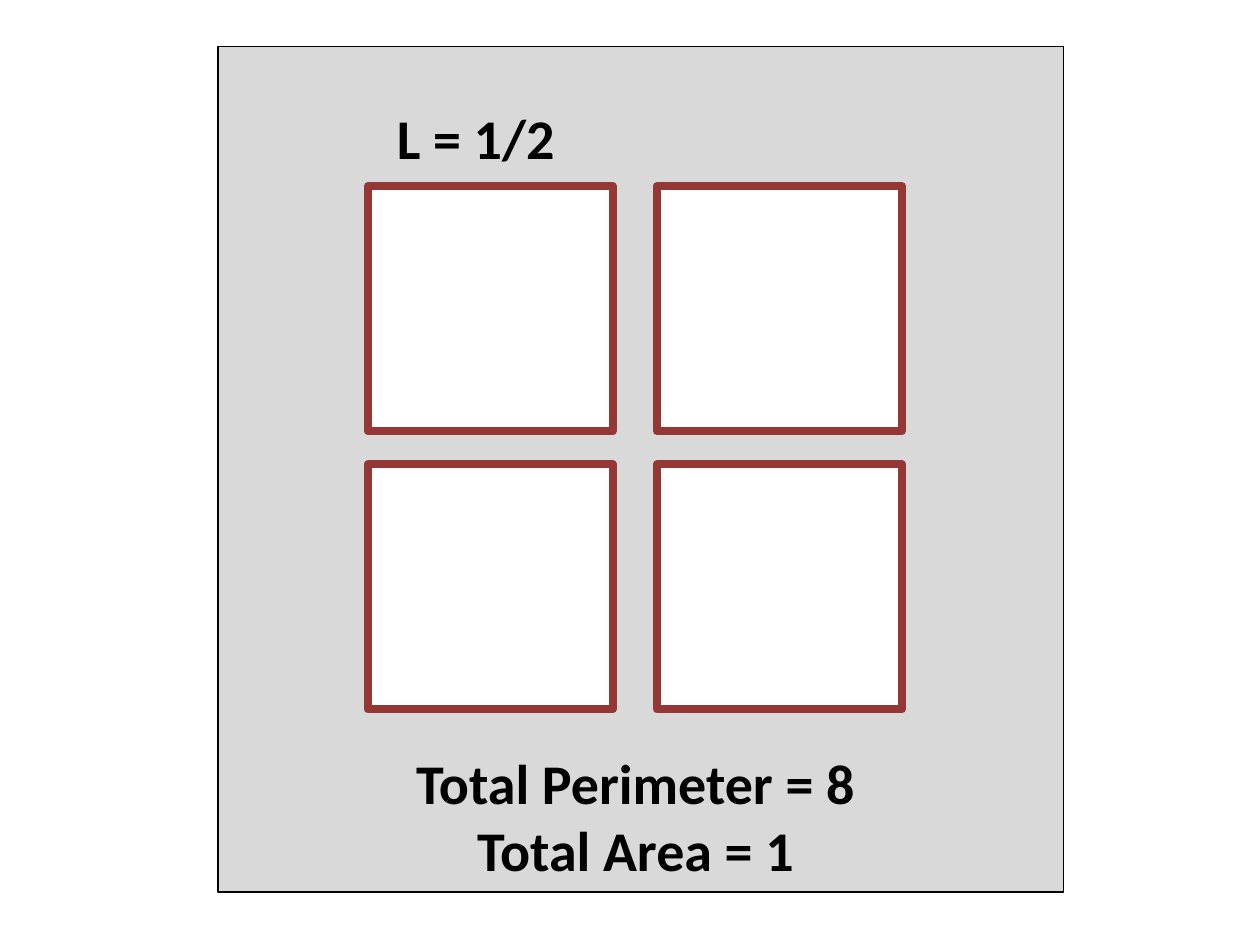
from itertools import product

from pptx import Presentation
from pptx.dml.color import RGBColor
from pptx.enum.shapes import MSO_SHAPE
from pptx.enum.text import PP_ALIGN
from pptx.util import Inches, Pt

RECTANGLE = MSO_SHAPE.RECTANGLE
LEFT = PP_ALIGN.LEFT
CENTER = PP_ALIGN.CENTER
COLORS = {
    "panel": "D9D9D9",
    "panel_border": "000000",
    "square": "FFFFFF",
    "square_border": "953735",
    "text": "000000",
}
FONT_NAME = "Calibri"
FONT_SIZE = 32
BLANK_LAYOUT = 6


def color(name):
    return RGBColor.from_string(COLORS[name])


def add_rectangle(slide, box, fill, border, border_width):
    shape = slide.shapes.add_shape(RECTANGLE, *map(Inches, box))
    shape.shadow.inherit = False
    shape.fill.solid()
    shape.fill.fore_color.rgb = color(fill)
    shape.line.color.rgb = color(border)
    shape.line.width = Pt(border_width)


def add_text(slide, box, lines, alignment):
    text_frame = slide.shapes.add_textbox(*map(Inches, box)).text_frame
    text_frame.word_wrap = True
    for index, line in enumerate(lines):
        paragraph = text_frame.add_paragraph() if index else text_frame.paragraphs[0]
        paragraph.alignment = alignment
        run = paragraph.add_run()
        run.text = line
        run.font.name = FONT_NAME
        run.font.size = Pt(FONT_SIZE)
        run.font.bold = True
        run.font.color.rgb = color("text")


def add_square_grid(slide, box, side, columns=2, rows=2):
    left, top, width, height = box
    column_step = (width - side) / (columns - 1)
    row_step = (height - side) / (rows - 1)
    for row, column in product(range(rows), range(columns)):
        square = (left + column * column_step, top + row * row_step, side, side)
        add_rectangle(slide, square, "square", "square_border", 4.5)


def add_squares_panel(slide, box):
    left, top, width, height = box
    add_rectangle(slide, box, "panel", "panel_border", 0.75)

    def place(x, y, share_width, share_height):
        return (left + x * width, top + y * height,
                share_width * width, share_height * height)

    add_text(slide, place(0.197, 0.06, 0.24, 0.095), ["L = 1/2"], LEFT)
    add_text(slide, place(0.192, 0.823, 0.604, 0.175),
             ["Total Perimeter = 8", "Total Area = 1"], CENTER)
    add_square_grid(slide, place(0.177, 0.165, 0.632, 0.619), 0.29 * width)


def main():
    presentation = Presentation()
    presentation.slide_width = Inches(10)
    presentation.slide_height = Inches(7.5)
    slide = presentation.slides.add_slide(presentation.slide_layouts[BLANK_LAYOUT])
    add_squares_panel(slide, (1.73, 0.37, 6.71, 6.71))
    presentation.save("out.pptx")


if __name__ == "__main__":
    main()
